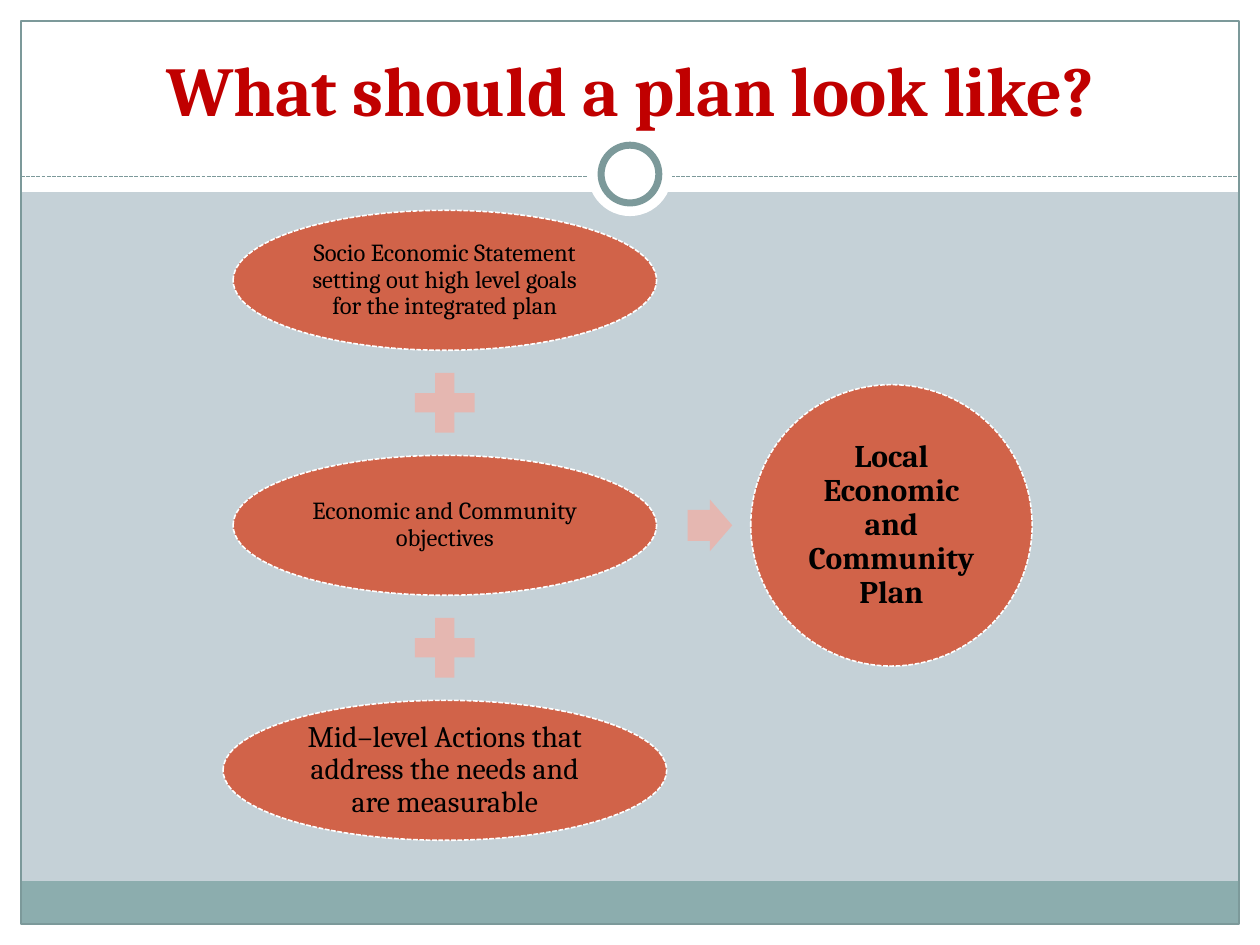
from pptx import Presentation
from pptx.dml.color import RGBColor
from pptx.enum.dml import MSO_LINE
from pptx.enum.shapes import MSO_CONNECTOR, MSO_SHAPE
from pptx.enum.text import MSO_ANCHOR, PP_ALIGN
from pptx.oxml.ns import qn
from pptx.util import Pt
from lxml import etree

RECT, OVAL = MSO_SHAPE.RECTANGLE, MSO_SHAPE.OVAL
PLUS, ARROW = MSO_SHAPE.MATH_PLUS, MSO_SHAPE.RIGHT_ARROW
LINE, DASH = MSO_CONNECTOR.STRAIGHT, MSO_LINE.SQUARE_DOT
CENTER = PP_ALIGN.CENTER
MIDDLE, BOTTOM = MSO_ANCHOR.MIDDLE, MSO_ANCHOR.BOTTOM

COLORS = {
    "ground": "C5D1D7", "white": "FFFFFF", "band": "8CADAE", "frame": "7C999A",
    "title": "C00000", "oval": "D16349", "sign": "E5B7B1", "text": "000000",
}
FONT = "Cambria"
WIDE, HIGH = 720, 540
EDGE = 12

TITLE = "What should a plan look like?"
# text, oval width, font size
STEPS = [
    ("Socio Economic Statement setting out high level goals for the integrated plan", 242, 14),
    ("Economic and Community objectives", 242, 14),
    ("Mid–level Actions that address the needs and are measurable", 253.5, 17),
]
RESULT = "Local Economic and Community Plan"

# left, top, width, height, fill
BANDS = [
    (0, HIGH - EDGE, WIDE, EDGE, "white"),
    (0, 0, WIDE, 109.7, "white"),
    (0, 0, EDGE, HIGH, "white"),
    (WIDE - EDGE, 0, EDGE, HIGH, "white"),
    (EDGE, 503.5, WIDE - 2 * EDGE, 24.5, "band"),
]
RULE_Y = 100.8
RING_Y = 99.5
STEP_X, STEP_Y, STEP_H, PITCH = 254.2, 160.2, 80, 140
PLUS_SIZE = 46.5
ARROW_X, RESULT_X, RESULT_SIZE = 405.7, 509.4, 160.8


def color(name):
    return RGBColor.from_string(COLORS[name])


def stroke(line, name, width, dash=None):
    line.color.rgb = color(name)
    line.width = Pt(width)
    if dash:
        line.dash_style = dash


def draw(slide, kind, box, fill=None):
    shape = slide.shapes.add_shape(kind, *map(Pt, box))
    shape.shadow.inherit = False
    if fill:
        shape.fill.solid()
        shape.fill.fore_color.rgb = color(fill)
    else:
        shape.fill.background()
    shape.line.fill.background()
    return shape


def around(x, y, w, h):
    """Box centred on a point."""
    return x - w / 2, y - h / 2, w, h


def write(shape, text, size, tint, bold=False, anchor=MIDDLE, inset=1.5, space=0.9):
    frame = shape.text_frame
    sides = {f"margin_{side}": Pt(inset) for side in ("left", "top", "right", "bottom")}
    for key, value in {"word_wrap": True, "vertical_anchor": anchor, **sides}.items():
        setattr(frame, key, value)
    para = frame.paragraphs[0]
    para.alignment = CENTER
    para.line_spacing = space
    run = para.add_run()
    run.text = text
    for key, value in {"name": FONT, "size": Pt(size), "bold": bold}.items():
        setattr(run.font, key, value)
    run.font.color.rgb = color(tint)


def add_oval(slide, box, text, size, bold=False, inset=1.5):
    oval = draw(slide, OVAL, box, "oval")
    stroke(oval.line, "white", 0.9, DASH)
    write(oval, text, size, "text", bold, inset=inset)


def add_frame(slide):
    for *box, fill in BANDS:
        draw(slide, RECT, box, fill)
    border = draw(slide, RECT, (EDGE, EDGE, WIDE - 2 * EDGE, HIGH - 2 * EDGE))
    stroke(border.line, "frame", 0.75)
    rule = slide.shapes.add_connector(LINE, *map(Pt, (EDGE, RULE_Y, WIDE - EDGE, RULE_Y)))
    stroke(rule.line, "frame", 0.75, DASH)
    etree.SubElement(rule._element.spPr, qn("a:effectLst"))
    draw(slide, OVAL, around(WIDE / 2, RING_Y, 48, 48), "white")
    ring = draw(slide, OVAL, around(WIDE / 2, RING_Y, 33, 33), "white")
    stroke(ring.line, "frame", 4)


def add_flow(slide):
    for i, (text, width, size) in enumerate(STEPS):
        y = STEP_Y + i * PITCH
        if i:
            box = around(STEP_X, y - PITCH / 2, PLUS_SIZE, PLUS_SIZE)
            draw(slide, PLUS, box, "sign")
        add_oval(slide, around(STEP_X, y, width, STEP_H), text, size)
    mid = STEP_Y + PITCH
    arrow = draw(slide, ARROW, around(ARROW_X, mid, 25.5, 29.5), "sign")
    arrow.adjustments[0] = 0.6
    arrow.adjustments[1] = 0.5
    box = around(RESULT_X, mid, RESULT_SIZE, RESULT_SIZE)
    add_oval(slide, box, RESULT, 18, bold=True, inset=2)


def main():
    deck = Presentation()
    deck.slide_width, deck.slide_height = Pt(WIDE), Pt(HIGH)
    slide = deck.slides.add_slide(deck.slide_layouts[6])
    slide.background.fill.solid()
    slide.background.fill.fore_color.rgb = color("ground")
    add_frame(slide)
    title = slide.shapes.add_textbox(*map(Pt, (24, 18, 672, 60)))
    write(title, TITLE, 40, "title", True, BOTTOM, inset=3.6, space=1)
    add_flow(slide)
    deck.save("out.pptx")


if __name__ == "__main__":
    main()
